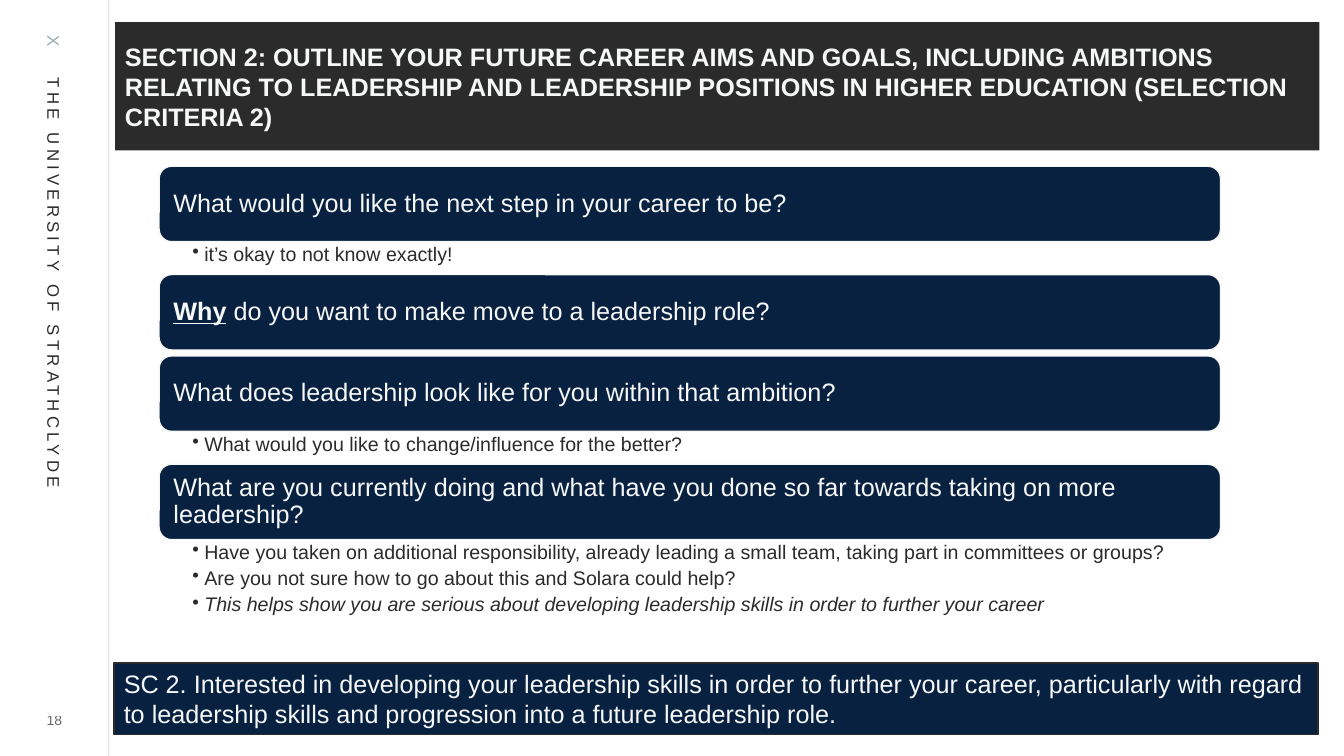
from pptx import Presentation
from pptx.dml.color import RGBColor
from pptx.enum.shapes import MSO_CONNECTOR, MSO_SHAPE
from pptx.enum.text import MSO_ANCHOR, PP_ALIGN
from pptx.oxml.ns import qn
from pptx.util import Cm, Pt
from lxml.etree import SubElement

NAVY = RGBColor(0x09, 0x21, 0x40)
CHARCOAL = RGBColor(0x2B, 0x2B, 0x2B)
OFF_WHITE = RGBColor(0xF6, 0xF8, 0xF8)
ICE = RGBColor(0xF8, 0xFA, 0xFF)
SAGE = RGBColor(0x95, 0xAC, 0xAC)

prs = Presentation()
prs.slide_width, prs.slide_height = Cm(33.87), Cm(19.05)
slide = prs.slides.add_slide(prs.slide_layouts[6])


def add_runs(paragraph, texts, size, color):
    for text in texts:
        run = paragraph.add_run()
        run.text = text
        run.font.name = "Arial"
        run.font.size = Pt(size)
        run.font.color.rgb = color
    return paragraph.runs


def add_panel(kind, left, top, width, height, fill, outline, anchor):
    panel = slide.shapes.add_shape(kind, Cm(left), Cm(top), Cm(width), Cm(height))
    panel.shadow.inherit = False
    panel.fill.solid()
    panel.fill.fore_color.rgb = fill
    panel.line.color.rgb = outline
    panel.line.width = Pt(1)
    panel.text_frame.word_wrap = True
    panel.text_frame.vertical_anchor = anchor
    panel.text_frame.paragraphs[0].alignment = PP_ALIGN.LEFT
    return panel


margin_rule = slide.shapes.add_connector(MSO_CONNECTOR.STRAIGHT, Cm(2.74), 0, Cm(2.74), prs.slide_height)
margin_rule.line.color.rgb = CHARCOAL
margin_rule.line.width = Pt(0.5)
SubElement(margin_rule.line.fill.fore_color._xFill.find(qn("a:srgbClr"))
           if hasattr(margin_rule.line.fill.fore_color, "_xFill")
           else next(margin_rule._element.spPr.iter(qn("a:srgbClr"))), qn("a:alpha")).set("val", "20000")
SubElement(margin_rule._element.spPr, qn("a:effectLst"))

university = slide.shapes.add_textbox(Cm(-5.84), Cm(7.47), Cm(14.4), Cm(0.76))
university.rotation = 90
university.text_frame.word_wrap = True
banner = university.text_frame.paragraphs[0]
tab_stops = SubElement(banner._p.get_or_add_pPr(), qn("a:tabLst"))
SubElement(tab_stops, qn("a:tab"), pos=str(Cm(1.06)), algn="l")
banner_runs = add_runs(banner, ["X", "\tTHE UNIVERSITY OF STRATHCLYDE"], 12, CHARCOAL)
banner_runs[0].font.color.rgb = SAGE
for run in banner_runs:
    run._r.get_or_add_rPr().set("spc", "300")

page_number = slide.shapes.add_textbox(Cm(0.66), Cm(17.83), Cm(1.42), Cm(0.64))
number_frame = page_number.text_frame
number_frame.margin_left = number_frame.margin_right = 0
number_frame.margin_top = number_frame.margin_bottom = 0
number_frame.vertical_anchor = MSO_ANCHOR.MIDDLE
number_frame.word_wrap = True
number_frame.paragraphs[0].alignment = PP_ALIGN.CENTER
number_run = add_runs(number_frame.paragraphs[0], ["18"], 10, CHARCOAL)[0]
SubElement(next(number_run._r.iter(qn("a:srgbClr"))), qn("a:alpha")).set("val", "70000")

criterion = add_panel(MSO_SHAPE.RECTANGLE, 2.87, 16.71, 30.35, 1.8, NAVY, CHARCOAL, MSO_ANCHOR.TOP)
criterion_runs = add_runs(criterion.text_frame.paragraphs[0], [
    "SC 2. ",
    "Interested in developing your leadership skills in order to further your career, "
    "particularly with regard to leadership skills and progression into a future leadership role.",
], 18, OFF_WHITE)
criterion_runs[0].font.color.rgb = ICE

questions = [
    (["What would you like the next step in your career to be?"],
     ["it’s okay to not know exactly!"]),
    (["Why", " do you want to make move to a leadership role?"], []),
    (["What does leadership look like for you within that ambition?"],
     ["What would you like to change/influence for the better?"]),
    (["What are you currently doing and what have you done so far towards taking on more leadership?"],
     ["Have you taken on additional responsibility, already leading a small team, "
      "taking part in committees or groups?",
      "Are you not sure how to go about this and Solara could help?",
      "This helps show you are serious about developing leadership skills in order to further your career"]),
]
LEFT, WIDTH, HEIGHT = 4.01, 26.75, 1.9
top = 4.19
for question, hints in questions:
    bar = add_panel(MSO_SHAPE.ROUNDED_RECTANGLE, LEFT, top, WIDTH, HEIGHT, NAVY, OFF_WHITE, MSO_ANCHOR.MIDDLE)
    bar.text_frame.margin_left = bar.text_frame.margin_right = Cm(0.27)
    heading = bar.text_frame.paragraphs[0]
    heading.line_spacing = 0.9
    heading_runs = add_runs(heading, question, 18, OFF_WHITE)
    if len(heading_runs) > 1:
        heading_runs[0].font.bold = True
        heading_runs[0].font.underline = True
    top += HEIGHT
    if not hints:
        top += 0.15
        continue
    hint_height = 0.83 if len(hints) == 1 else HEIGHT
    hint_frame = slide.shapes.add_textbox(Cm(LEFT), Cm(top), Cm(WIDTH), Cm(hint_height)).text_frame
    hint_frame.word_wrap = True
    hint_frame.margin_left, hint_frame.margin_right = Cm(0.84), Cm(0.36)
    hint_frame.margin_top = hint_frame.margin_bottom = Cm(0.08)
    for index, hint in enumerate(hints):
        bullet = hint_frame.add_paragraph() if index else hint_frame.paragraphs[0]
        bullet.line_spacing = 0.9
        bullet.space_after = Pt(3.5)
        properties = bullet._p.get_or_add_pPr()
        properties.set("marL", str(Cm(0.3)))
        properties.set("indent", str(-Cm(0.3)))
        SubElement(properties, qn("a:buChar"), char="•")
        hint_run = add_runs(bullet, [hint], 14, CHARCOAL)[0]
        hint_run.font.italic = hint.startswith("This helps")
    top += hint_height

title = add_panel(MSO_SHAPE.RECTANGLE, 2.9, 0.56, 30.35, 3.23, CHARCOAL, CHARCOAL, MSO_ANCHOR.MIDDLE)
title.line.fill.background()
title_run = add_runs(title.text_frame.paragraphs[0], [
    "SECTION 2: OUTLINE YOUR FUTURE CAREER AIMS AND GOALS, INCLUDING AMBITIONS RELATING TO "
    "LEADERSHIP AND LEADERSHIP POSITIONS IN HIGHER EDUCATION (SELECTION CRITERIA 2)",
], 18, OFF_WHITE)[0]
title_run.font.bold = True

prs.save("out.pptx")
